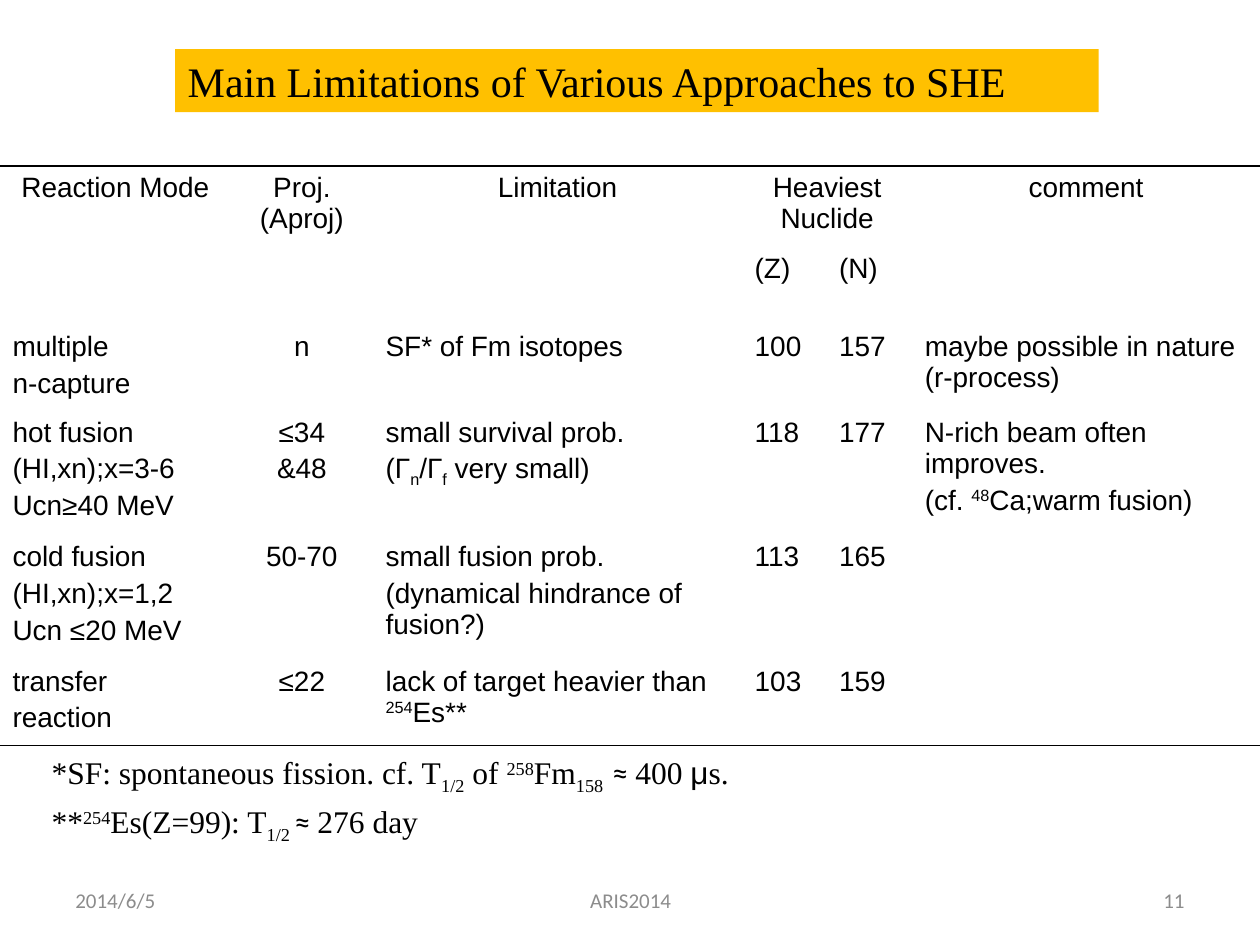
from lxml import etree
from pptx import Presentation
from pptx.dml.color import RGBColor
from pptx.enum.text import MSO_ANCHOR, MSO_AUTO_SIZE, PP_ALIGN
from pptx.oxml.ns import qn
from pptx.util import Cm, Pt

LEFT, CENTER, RIGHT = PP_ALIGN.LEFT, PP_ALIGN.CENTER, PP_ALIGN.RIGHT
MIDDLE = MSO_ANCHOR.MIDDLE
NO_AUTOFIT = MSO_AUTO_SIZE.NONE
COLORS = {"text": "000000", "title": "FFC000", "footer": "8C8C8C"}
SERIF, SANS, FOOTER_FONT = "Times New Roman", "Arial", "Calibri"
PLAIN_TABLE_STYLE = "{2D5ABB26-0587-4C30-8999-92F81FD0307C}"
SUB, SUP = {"baseline": "-25000"}, {"baseline": "30000"}
ALMOST = ("≈ ", {"font": "Calibri"})

TITLE = "Main Limitations of Various Approaches to SHE"
COLUMN_WIDTHS = [4.65, 2.87, 7.44, 1.7, 1.73, 7.01]
ROW_HEIGHTS = [1.63, 1.57, 1.73, 2.51, 2.51, 1.73]
HEADER_ROWS = 2
CENTERED_COLUMN = 1
MERGES = [((0, column), (1, column)) for column in (0, 1, 2, 5)] + [((0, 3), (0, 4))]
ROWS = [
    [["Reaction Mode"], ["Proj. (Aproj)"], ["Limitation"], ["Heaviest Nuclide"], [], ["comment"]],
    [[], [], [], ["(Z)"], ["(N)"], []],
    [["multiple", "n-capture"], ["n"], ["SF* of Fm isotopes"], ["100"], ["157"],
     ["maybe possible in nature (r-process)"]],
    [["hot fusion", "(HI,xn);x=3-6", "Ucn≥40 MeV"], ["≤34", "&48"],
     ["small survival prob.", ["(Γ", ("n", SUB), "/Γ", ("f", SUB), " very small)"]],
     ["118"], ["177"],
     ["N-rich beam often improves.", ["(cf. ", ("48", SUP), "Ca;warm fusion)"]]],
    [["cold fusion", "(HI,xn);x=1,2", "Ucn ≤20 MeV"], ["50-70"],
     ["small fusion prob.", "(dynamical hindrance of fusion?)"], ["113"], ["165"], []],
    [["transfer", "reaction"], ["≤22"],
     [["lack of target heavier than ", ("254", SUP), "Es**"]], ["103"], ["159"], []],
]
NOTES = [
    (15.06, 15.75, ["*SF: spontaneous fission. cf. T", ("1/2", SUB), " of ", ("258", SUP), "Fm",
                    ("158  ", SUB), ALMOST, "400 ", ("μ", {"font": SANS}), "s."]),
    (16.05, 8.81, ["**", ("254", SUP), "Es(Z=99): T", ("1/2 ", SUB), ALMOST, "276 day"]),
]
FOOTERS = [
    (1.27, 5.92, "2014/6/5", LEFT),
    (8.69, 8.05, "ARIS2014", CENTER),
    (18.21, 5.92, "11", RIGHT),
]


def write_paragraph(paragraph, runs, font, size, color=COLORS["text"], alignment=LEFT):
    paragraph.alignment = alignment
    for item in [runs] if isinstance(runs, str) else runs:
        text, style = (item, {}) if isinstance(item, str) else item
        run = paragraph.add_run()
        run.text = text
        run.font.name = style.get("font", font)
        run.font.size = Pt(size)
        run.font.color.rgb = RGBColor.from_string(color)
        if "baseline" in style:
            run.font._element.set("baseline", style["baseline"])


def add_text(slide, left, top, width, runs, **formatting):
    box = slide.shapes.add_textbox(Cm(left), Cm(top), Cm(width), Cm(1.01))
    box.text_frame.word_wrap = True
    write_paragraph(box.text_frame.paragraphs[0], runs, **formatting)
    return box


def set_borders(cell, sides):
    properties = cell._tc.get_or_add_tcPr()
    for position, side in enumerate(("L", "R", "T", "B")):
        line = etree.Element(qn(f"a:ln{side}"), w=str(Pt(1)))
        if side in sides:
            fill = etree.SubElement(line, qn("a:solidFill"))
            etree.SubElement(fill, qn("a:srgbClr"), val=COLORS["text"])
        else:
            etree.SubElement(line, qn("a:noFill"))
        properties.insert(position, line)


def add_limits_table(slide):
    frame = slide.shapes.add_table(len(ROWS), len(COLUMN_WIDTHS), 0, Cm(3.35),
                                   Cm(sum(COLUMN_WIDTHS)), Cm(sum(ROW_HEIGHTS)))
    table = frame.table
    table.first_row = table.horz_banding = False
    table._tbl.tblPr.find(qn("a:tableStyleId")).text = PLAIN_TABLE_STYLE
    for column, width in zip(table.columns, COLUMN_WIDTHS):
        column.width = Cm(width)
    for row, height in zip(table.rows, ROW_HEIGHTS):
        row.height = Cm(height)
    for start, end in MERGES:
        table.cell(*start).merge(table.cell(*end))

    for row_index, row in enumerate(ROWS):
        for column_index, paragraphs in enumerate(row):
            cell = table.cell(row_index, column_index)
            cell.fill.background()
            last_row = row_index + (cell.span_height if cell.is_merge_origin else 1)
            sides = ("T" if row_index == 0 else "") + ("B" if last_row >= HEADER_ROWS else "")
            set_borders(cell, sides)
            centered = row_index == 0 or column_index == CENTERED_COLUMN
            for index, runs in enumerate(paragraphs):
                frame = cell.text_frame
                paragraph = frame.add_paragraph() if index else frame.paragraphs[0]
                paragraph.space_before = Pt(3.2)
                write_paragraph(paragraph, runs, SANS, 16, alignment=CENTER if centered else LEFT)
            if not paragraphs:
                cell.text_frame.paragraphs[0].font.size = Pt(16)


def main():
    presentation = Presentation()
    presentation.slide_width, presentation.slide_height = Cm(25.4), Cm(19.05)
    slide = presentation.slides.add_slide(presentation.slide_layouts[5])

    title = slide.shapes.title
    title.left, title.top, title.width, title.height = Cm(3.53), Cm(0.99), Cm(18.62), Cm(1.27)
    title.fill.solid()
    title.fill.fore_color.rgb = RGBColor.from_string(COLORS["title"])
    title.text_frame.auto_size = NO_AUTOFIT
    write_paragraph(title.text_frame.paragraphs[0], TITLE, SERIF, 24)

    add_limits_table(slide)
    for top, width, runs in NOTES:
        add_text(slide, 0.79, top, width, runs, font=SERIF, size=18)
    for left, width, text, alignment in FOOTERS:
        box = add_text(slide, left, 17.65, width, text, font=FOOTER_FONT, size=12,
                       color=COLORS["footer"], alignment=alignment)
        box.text_frame.vertical_anchor = MIDDLE

    presentation.save("out.pptx")


if __name__ == "__main__":
    main()
